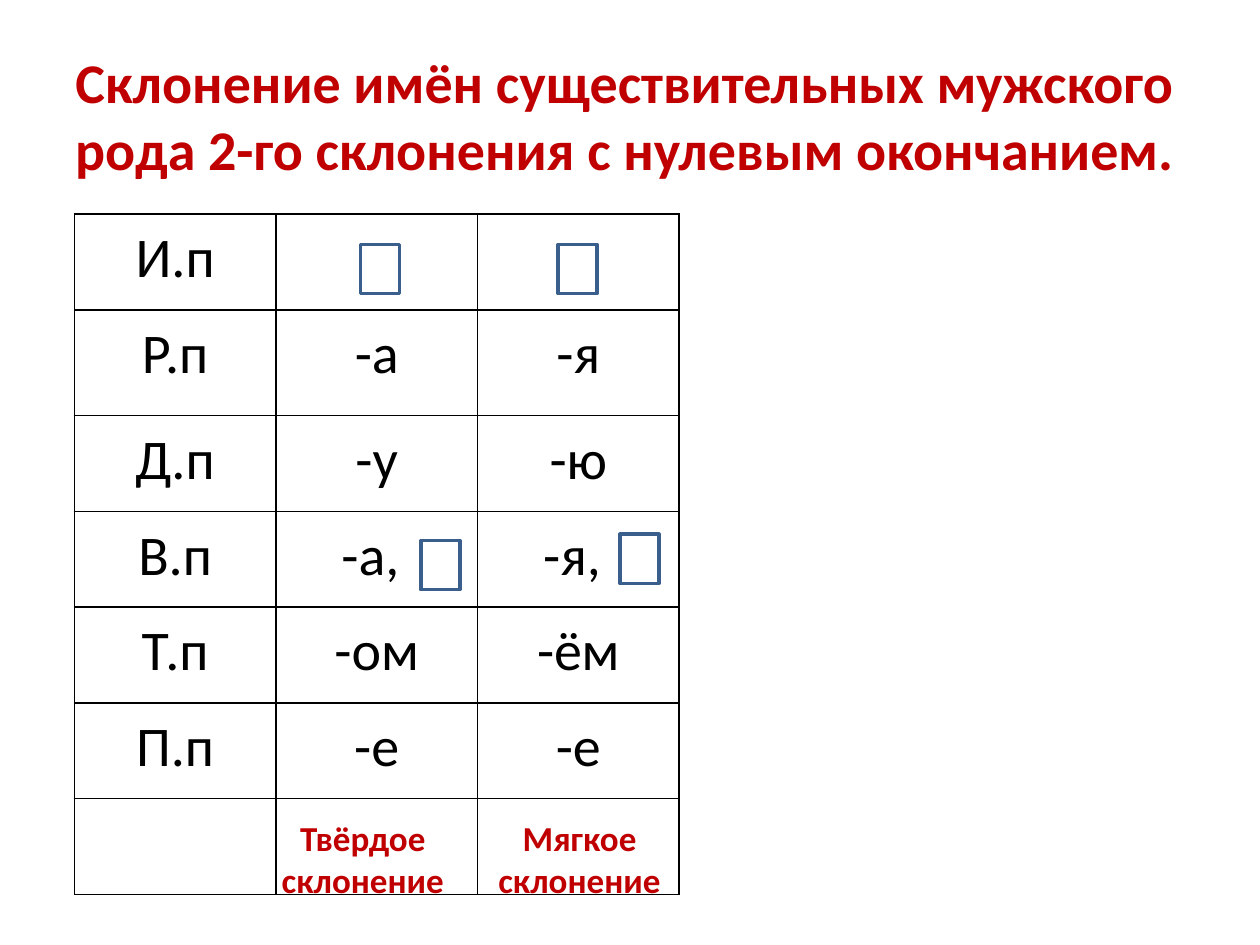
from lxml.etree import SubElement
from pptx import Presentation
from pptx.dml.color import RGBColor
from pptx.enum.shapes import MSO_SHAPE
from pptx.enum.text import MSO_ANCHOR, PP_ALIGN
from pptx.oxml.ns import qn
from pptx.util import Inches, Pt

COLORS = {"accent": "C00000", "text": "000000", "box": "3A5F8C"}
COLUMN, ROW, TALL_ROW = 1.6, 0.76, 0.84
LEFT, TOP = 0.59, 1.7
ENDINGS = [
    ("И.п", "", ""),
    ("Р.п", "-а", "-я"),
    ("Д.п", "-у", "-ю"),
    ("В.п", "-а, ", "-я, "),
    ("Т.п", "-ом", "-ём"),
    ("П.п", "-е", "-е"),
    ("", "", ""),
]


def style_text(text_frame, size, color, bold=False):
    for paragraph in text_frame.paragraphs:
        paragraph.alignment = PP_ALIGN.CENTER
        for run in paragraph.runs:
            run.font.name = "Calibri"
            run.font.size = Pt(size)
            run.font.bold = bold
            run.font.color.rgb = RGBColor.from_string(COLORS[color])


def add_label(left, top, width, height, text, size, wrap):
    shape = slide.shapes.add_textbox(Inches(left), Inches(top), Inches(width), Inches(height))
    shape.text_frame.text = text
    shape.text_frame.word_wrap = wrap
    style_text(shape.text_frame, size, "accent", bold=True)
    return shape


presentation = Presentation()
presentation.slide_width, presentation.slide_height = Inches(10), Inches(7.5)
slide = presentation.slides.add_slide(presentation.slide_layouts[6])

title = add_label(
    0.46, -0.27, 9, 2.36,
    "Склонение имён существительных мужского рода 2-го склонения с нулевым окончанием.",
    32, True,
)
title.text_frame.vertical_anchor = MSO_ANCHOR.MIDDLE

table = slide.shapes.add_table(
    len(ENDINGS), 3, Inches(LEFT), Inches(TOP), Inches(3 * COLUMN), Inches(6 * ROW + TALL_ROW)
).table
table.first_row = table.horz_banding = False
for column in table.columns:
    column.width = Inches(COLUMN)
for row_index, texts in enumerate(ENDINGS):
    table.rows[row_index].height = Inches(TALL_ROW if row_index == 1 else ROW)
    for column_index, text in enumerate(texts):
        cell = table.cell(row_index, column_index)
        cell.margin_left = cell.margin_right = Inches(0.07)
        cell.margin_top = cell.margin_bottom = 0
        cell.text_frame.text = text
        cell.text_frame.paragraphs[0].line_spacing = 1.15
        style_text(cell.text_frame, 32, "text")
        properties = cell._tc.get_or_add_tcPr()
        for side in ("a:lnL", "a:lnR", "a:lnT", "a:lnB"):
            border = SubElement(properties, qn(side), w=str(Pt(1)))
            SubElement(SubElement(border, qn("a:solidFill")), qn("a:srgbClr"), val=COLORS["text"])
        cell.fill.background()

for left, top in [(2.86, 1.94), (4.43, 1.94), (3.34, 4.29), (4.92, 4.24)]:
    zero_ending = slide.shapes.add_shape(
        MSO_SHAPE.RECTANGLE, Inches(left), Inches(top), Inches(0.31), Inches(0.39)
    )
    zero_ending.shadow.inherit = False
    zero_ending.fill.background()
    zero_ending.line.color.rgb = RGBColor.from_string(COLORS["box"])
    zero_ending.line.width = Pt(2)

for left, kind in [(2.1, "Твёрдое"), (3.82, "Мягкое")]:
    add_label(left, 6.43, 1.56, ROW, f"{kind}\nсклонение", 20, False)

presentation.save("out.pptx")
